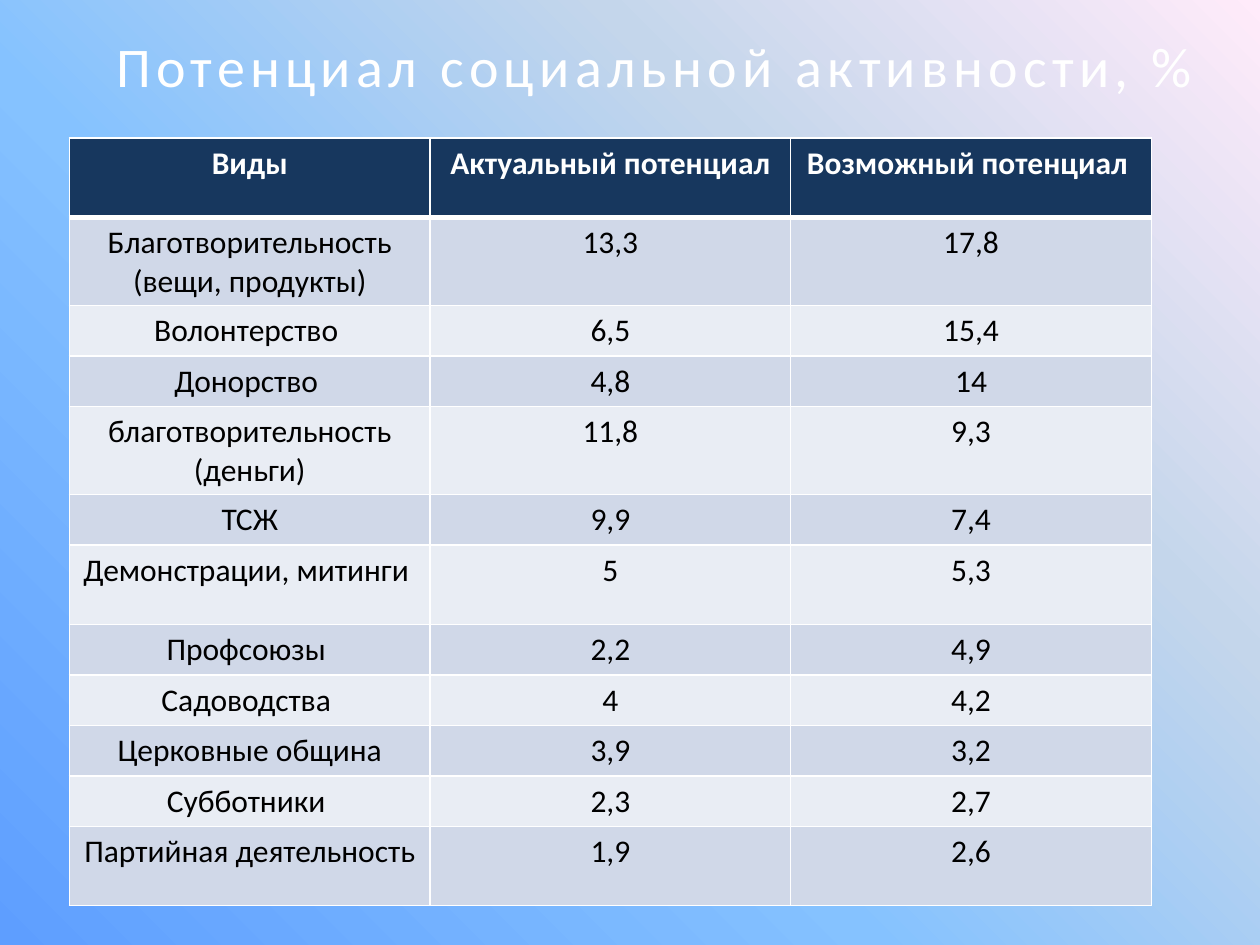
from lxml.etree import SubElement
from pptx import Presentation
from pptx.dml.color import RGBColor
from pptx.enum.text import MSO_ANCHOR as Anchor, PP_ALIGN as Align
from pptx.oxml import parse_xml
from pptx.oxml.ns import nsdecls, qn
from pptx.util import Cm, Pt

HEADINGS = ("Виды", "Актуальный потенциал", "Возможный потенциал ")
ACTIVITIES = (
    ("Благотворительность (вещи, продукты)", "13,3", "17,8"),
    ("Волонтерство ", "6,5", "15,4"),
    ("Донорство ", "4,8", "14"),
    ("благотворительность (деньги)", "11,8", "9,3"),
    ("ТСЖ", "9,9", "7,4"),
    ("Демонстрации, митинги ", "5", "5,3"),
    ("Профсоюзы ", "2,2", "4,9"),
    ("Садоводства ", "4", "4,2"),
    ("Церковные община", "3,9", "3,2"),
    ("Субботники ", "2,3", "2,7"),
    ("Партийная деятельность ", "1,9", "2,6"),
)
TALL_ROWS = {0, 1, 4, 6, 11}
GRADIENT = ((0, "5E9EFF"), (40, "85C2FF"), (70, "C4D6EB"), (100, "FFEBFA"))


def color(value):
    return RGBColor.from_string(value)


class SlideBuilder:
    """Hold the slide style and draw each kind of element on the slide."""

    white = "FFFFFF"
    header_fill = "17375E"
    band_fills = ("E9EDF4", "D0D8E8")
    title_format = {"size": Pt(32), "bold": False, "color": white}
    header_format = {"size": Pt(18), "bold": True, "color": white}
    body_format = {"size": Pt(18), "bold": False, "color": "000000"}

    def __init__(self, slide):
        self.slide = slide

    def background(self, stops, angle):
        fill = self.slide.background.fill
        fill.gradient()
        fill.gradient_angle = angle
        stop_list = next(self.slide.element.iter(qn("a:gsLst")))
        for stop in list(stop_list):
            stop_list.remove(stop)
        for position, value in stops:
            stop = SubElement(stop_list, qn("a:gs"), pos=str(position * 1000))
            SubElement(stop, qn("a:srgbClr"), val=value)

    def add_text(self, frame, text, formats):
        paragraph = frame.paragraphs[0]
        paragraph.alignment = Align.CENTER
        run = paragraph.add_run()
        run.text = text
        run.font.name = "Calibri"
        for name, value in formats.items():
            if name == "color":
                run.font.color.rgb = color(value)
            else:
                setattr(run.font, name, value)
        return run

    def title(self, text, left, top, width, height):
        frame = self.slide.shapes.add_textbox(left, top, width, height).text_frame
        frame.word_wrap = True
        frame.vertical_anchor = Anchor.MIDDLE
        run = self.add_text(frame, text, self.title_format)
        run._r.get_or_add_rPr().set("spc", "300")

    def borders(self, cell, row):
        widths = {"L": 1, "R": 1, "T": 3 if row == 1 else 1, "B": 3 if row == 0 else 1}
        properties = cell._tc.get_or_add_tcPr()
        for index, (side, width) in enumerate(widths.items()):
            line = parse_xml(
                f'<a:ln{side} {nsdecls("a")} w="{int(Pt(width))}"><a:solidFill>'
                f'<a:srgbClr val="{self.white}"/></a:solidFill></a:ln{side}>'
            )
            properties.insert(index, line)

    def table(self, rows, left, top, column_width, heights):
        columns = len(rows[0])
        shape = self.slide.shapes.add_table(
            len(rows), columns, left, top, column_width * columns, sum(heights)
        )
        table = shape.table
        for column in table.columns:
            column.width = column_width
        for row, (texts, height) in enumerate(zip(rows, heights)):
            table.rows[row].height = height
            fill = self.band_fills[row % 2] if row else self.header_fill
            formats = self.body_format if row else self.header_format
            for column, text in enumerate(texts):
                cell = table.cell(row, column)
                cell.fill.solid()
                cell.fill.fore_color.rgb = color(fill)
                self.add_text(cell.text_frame, text, formats)
                self.borders(cell, row)


def main():
    presentation = Presentation()
    presentation.slide_width = Cm(25.4)
    presentation.slide_height = Cm(19.05)
    slide = presentation.slides.add_slide(presentation.slide_layouts[6])
    builder = SlideBuilder(slide)
    builder.background(GRADIENT, 45)
    builder.title(
        "Потенциал социальной активности, %", Cm(1.98), Cm(0.41), Cm(22.45), Cm(1.8)
    )
    rows = (HEADINGS, *ACTIVITIES)
    heights = [Cm(1.6 if row in TALL_ROWS else 0.92) for row in range(len(rows))]
    builder.table(rows, Cm(1.4), Cm(2.78), Cm(7.27), heights)
    presentation.save("out.pptx")


if __name__ == "__main__":
    main()
